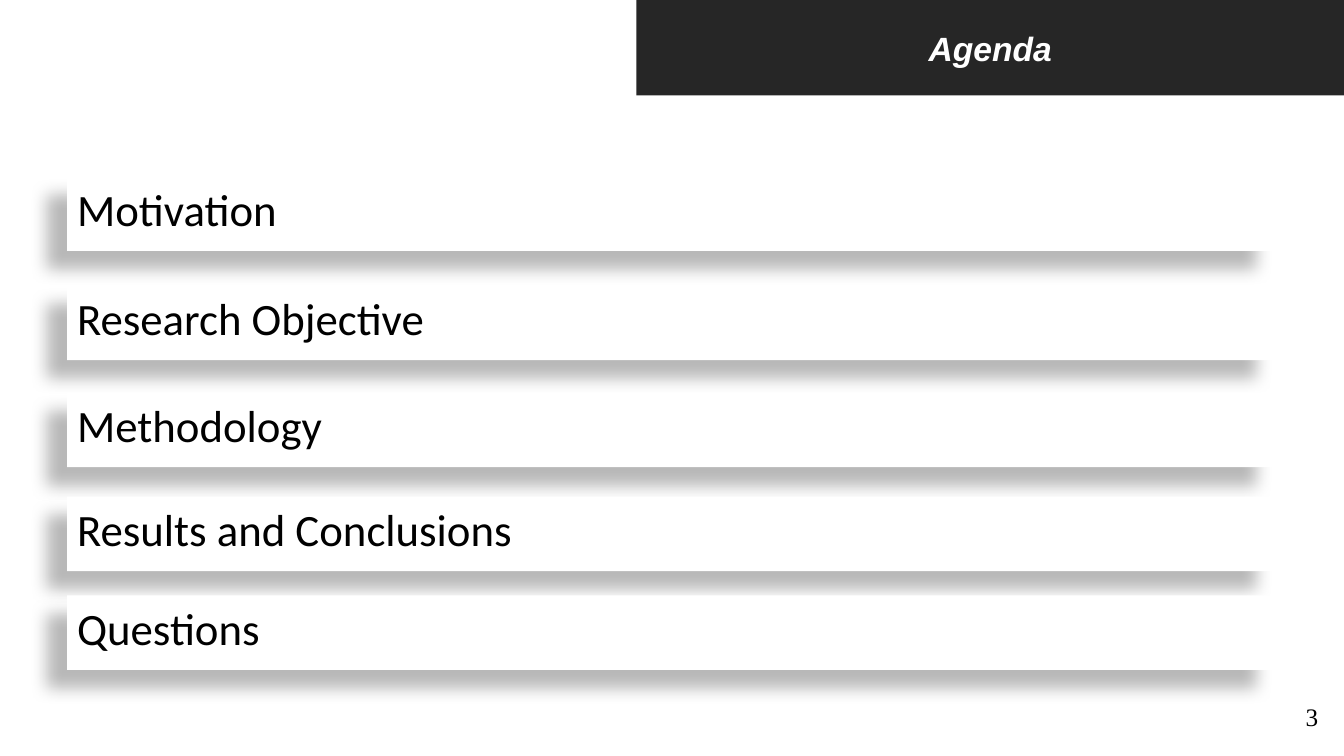
from lxml import etree
from pptx import Presentation
from pptx import util as u
from pptx.dml.color import RGBColor
from pptx.enum import shapes, text
from pptx.oxml import ns

PX = 9525
COLOURS = {"banner": "262626", "paper": "FFFFFF", "ink": "000000"}
AGENDA = [
    ("Motivation", 168),
    ("Research Objective", 272),
    ("Methodology", 374),
    ("Results and Conclusions", 473),
    ("Questions", 567),
]


def add_panel(page, left, top, width, height, fill):
    panel = page.shapes.add_shape(
        shapes.MSO_SHAPE.RECTANGLE, left * PX, top * PX, width * PX, height * PX
    )
    panel.shadow.inherit = False
    panel.fill.solid()
    panel.fill.fore_color.rgb = RGBColor.from_string(COLOURS[fill])
    panel.line.fill.background()
    return panel


def write(box, words, font, size, colour, align, anchor):
    frame = box.text_frame
    frame.text = words
    frame.word_wrap = True
    frame.vertical_anchor = anchor
    para = frame.paragraphs[0]
    para.alignment = align
    span = para.runs[0]
    span.font.name = font
    span.font.size = u.Pt(size)
    span.font.color.rgb = RGBColor.from_string(COLOURS[colour])
    return span


deck = Presentation()
deck.slide_width = 1280 * PX
deck.slide_height = 720 * PX
page = deck.slides.add_slide(deck.slide_layouts[6])

banner = add_panel(page, 606, 0, 674, 91, "banner")
title = write(banner, "Agenda", "Arial", 24, "paper",
              text.PP_ALIGN.CENTER, text.MSO_ANCHOR.MIDDLE)
title.font.bold = True
title.font.italic = True

number = page.shapes.add_textbox(1234 * PX, 663 * PX, 46 * PX, 38 * PX)
write(number, "3", "Times New Roman", 18, "ink",
      text.PP_ALIGN.LEFT, text.MSO_ANCHOR.TOP)

for topic, top in AGENDA:
    bar = add_panel(page, 64, top, 1152, 71, "paper")
    write(bar, topic, "Calibri", 32, "ink",
          text.PP_ALIGN.LEFT, text.MSO_ANCHOR.TOP)
    effects = bar.element.spPr.find(ns.qn("a:effectLst"))
    shadow = etree.SubElement(
        effects, ns.qn("a:outerShdw"), blurRad=str(u.Pt(11.8)),
        dist=str(u.Pt(19.7)), dir=str(141 * 60000), rotWithShape="0",
    )
    shade = etree.SubElement(shadow, ns.qn("a:srgbClr"), val=COLOURS["ink"])
    etree.SubElement(shade, ns.qn("a:alpha"), val="28000")

deck.save("out.pptx")
